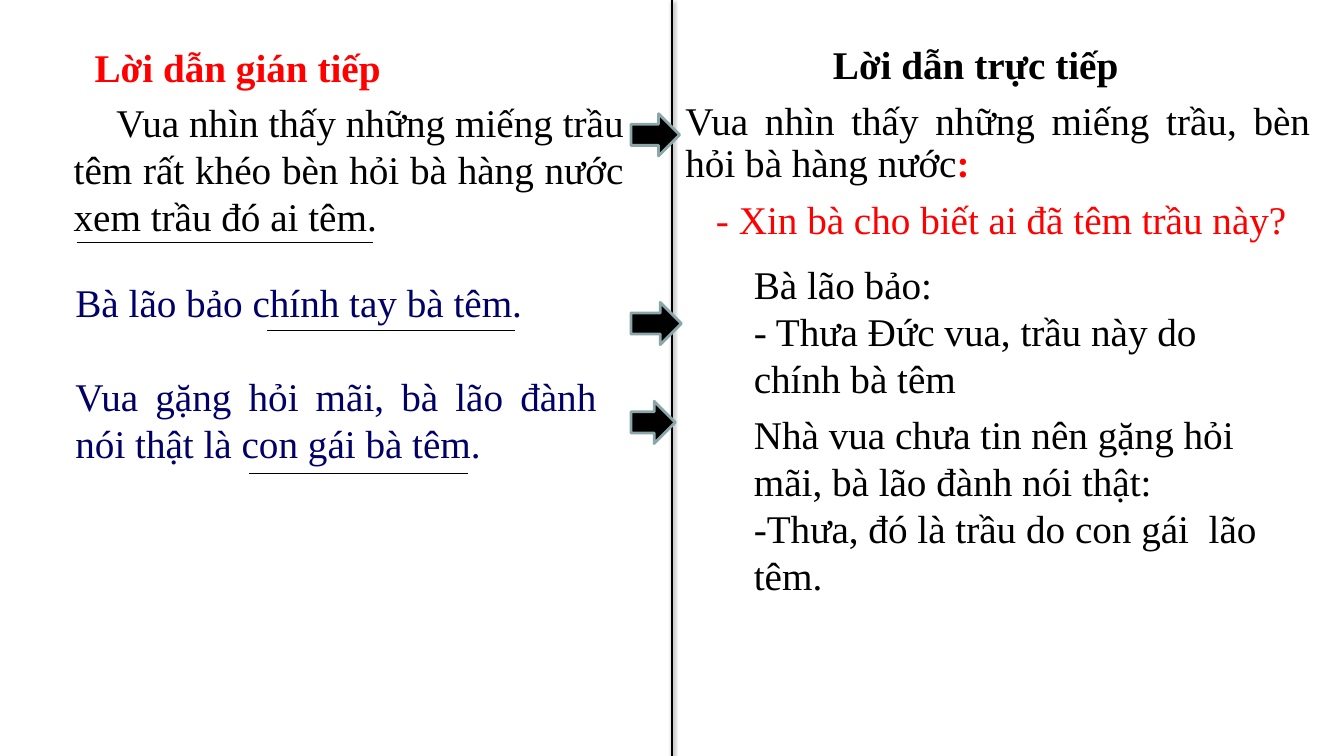
from lxml import etree
from pptx import Presentation
from pptx.dml.color import RGBColor
from pptx.enum.shapes import MSO_CONNECTOR, MSO_SHAPE
from pptx.enum.text import MSO_ANCHOR, MSO_AUTO_SIZE, PP_ALIGN
from pptx.oxml.ns import qn
from pptx.util import Pt

LEFT, JUSTIFY = PP_ALIGN.LEFT, PP_ALIGN.JUSTIFY
STRAIGHT = MSO_CONNECTOR.STRAIGHT
RIGHT_ARROW = MSO_SHAPE.RIGHT_ARROW
TOP = MSO_ANCHOR.TOP
NO_AUTOFIT = MSO_AUTO_SIZE.NONE

BLACK = RGBColor(0x00, 0x00, 0x00)
RED = RGBColor(0xFF, 0x00, 0x00)
NAVY = RGBColor(0x00, 0x00, 0x66)
GREY_TEAL = RGBColor(0x8A, 0xA6, 0xA8)


def write(paragraph, text, color, align, bold=False):
    paragraph.text = text
    paragraph.alignment = align
    paragraph.font.name = "Times New Roman"
    paragraph.font.size = Pt(28)
    paragraph.font.bold = bold
    paragraph.font.color.rgb = color


def draw_line(x1, y1, x2, y2, weight):
    line = slide.shapes.add_connector(STRAIGHT, Pt(x1), Pt(y1), Pt(x2), Pt(y2))
    line.line.color.rgb = BLACK
    line.line.width = Pt(weight)
    return etree.SubElement(line._element.spPr, qn("a:effectLst"))


prs = Presentation()
prs.slide_width, prs.slide_height = Pt(960), Pt(540)
slide = prs.slides.add_slide(prs.slide_layouts[3])
title, indirect, direct = slide.placeholders
title._element.getparent().remove(title._element)

# Indirect and direct speech columns: (text, colour, bold, left margin, first-line indent)
columns = [
    (indirect, (18, 27.4, 434.9, 175), None, None, [
        ("Lời dẫn gián tiếp", RED, True, 27.4, 15),
        ("Vua nhìn thấy những miếng trầu têm rất khéo bèn hỏi bà hàng nước "
         "xem trầu đó ai têm.", BLACK, False, 27.4, 30.5),
    ]),
    (direct, (482.4, 28.8, 460.8, 163.4), 0.9, Pt(10), [
        ("Lời dẫn trực tiếp", BLACK, True, 0, 105.4),
        ("Vua nhìn thấy những miếng trầu, bèn hỏi bà hàng nước", BLACK, False, 0, 0),
        ("- Xin bà cho biết ai đã têm trầu này?", RED, False, 0, 21.8),
    ]),
]
for column, box, line_spacing, space_before, passages in columns:
    column.left, column.top, column.width, column.height = map(Pt, box)
    frame = column.text_frame
    frame.auto_size = NO_AUTOFIT
    frame.vertical_anchor = TOP
    for i, (text, color, bold, margin, indent) in enumerate(passages):
        paragraph = frame.add_paragraph() if i else frame.paragraphs[0]
        write(paragraph, text, color, JUSTIFY, bold)
        paragraph.line_spacing = line_spacing
        paragraph.space_before = space_before
        properties = paragraph._p.get_or_add_pPr()
        properties.set("marL", str(Pt(margin)))
        properties.set("indent", str(Pt(indent)))
        properties.insert_element_before(
            properties.makeelement(qn("a:buNone"), {}), "a:tabLst", "a:defRPr", "a:extLst")

# Red colon that introduces the quotation
colon = direct.text_frame.paragraphs[1].add_run()
colon.text = ":"
colon.font.bold = True
colon.font.color.rgb = RED

# Divider with a soft shadow
divider_effects = draw_line(480, 540, 480, 0, 2)
shadow = etree.SubElement(divider_effects, qn("a:outerShdw"), blurRad=str(Pt(3.1)),
                          dist=str(Pt(1.6)), dir="5400000", rotWithShape="0")
shadow_color = etree.SubElement(shadow, qn("a:srgbClr"), val="000000")
etree.SubElement(shadow_color, qn("a:alpha"), val="38000")

# Arrows from indirect to direct speech
for top, width in [(81.2, 34.8), (216, 36), (286.6, 31.7)]:
    arrow = slide.shapes.add_shape(RIGHT_ARROW, Pt(450.7), Pt(top), Pt(width), Pt(30.2))
    arrow.shadow.inherit = False
    arrow.fill.solid()
    arrow.fill.fore_color.rgb = BLACK
    arrow.line.color.rgb = GREY_TEAL
    arrow.line.width = Pt(2)

# Remaining dialogue: (box, colour, alignment, gap between paragraphs, paragraphs)
dialogues = [
    ((46.8, 195.1, 386.6, 143.3), NAVY, JUSTIFY, 33.5,
     ["Bà lão bảo chính tay bà têm.",
      "Vua gặng hỏi mãi, bà lão đành nói thật là con gái bà têm."]),
    ((531.4, 182.2, 396, 108.7), BLACK, LEFT, 0,
     ["Bà lão bảo:", "- Thưa Đức vua, trầu này do chính bà têm"]),
    ((531.4, 289.4, 381.6, 143.3), BLACK, LEFT, 0,
     ["Nhà vua chưa tin nên gặng hỏi mãi, bà lão đành nói thật:",
      "-Thưa, đó là trầu do con gái  lão têm."]),
]
for box, color, align, gap, lines in dialogues:
    frame = slide.shapes.add_textbox(*map(Pt, box)).text_frame
    frame.word_wrap = True
    for i, text in enumerate(lines):
        paragraph = frame.add_paragraph() if i else frame.paragraphs[0]
        write(paragraph, text, color, align)
        paragraph.space_before = Pt(gap if i else 0)

# Underlines beneath the reported words
for start, end, y in [(54.7, 266.4, 173.5), (190.8, 367.9, 236.2), (177.8, 334.1, 338.4)]:
    draw_line(start, y, end, y, 0.75)

prs.save("out.pptx")
